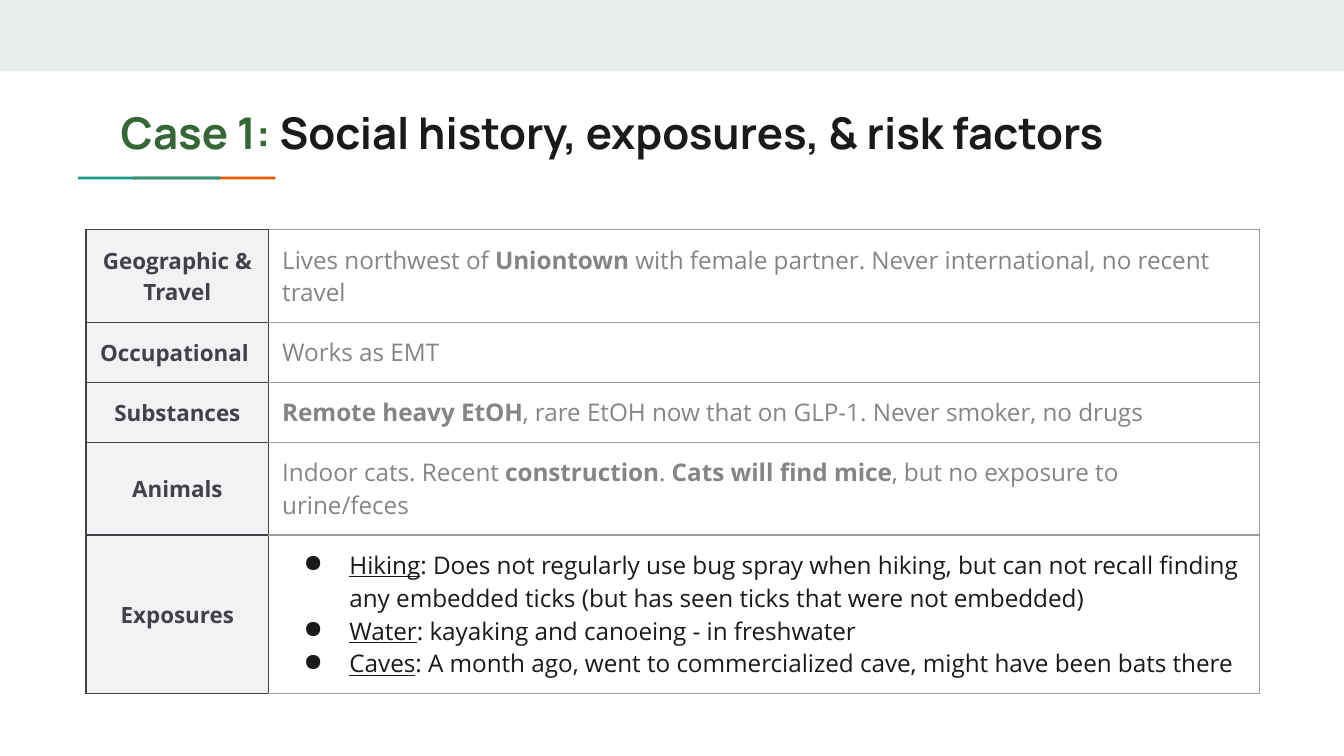
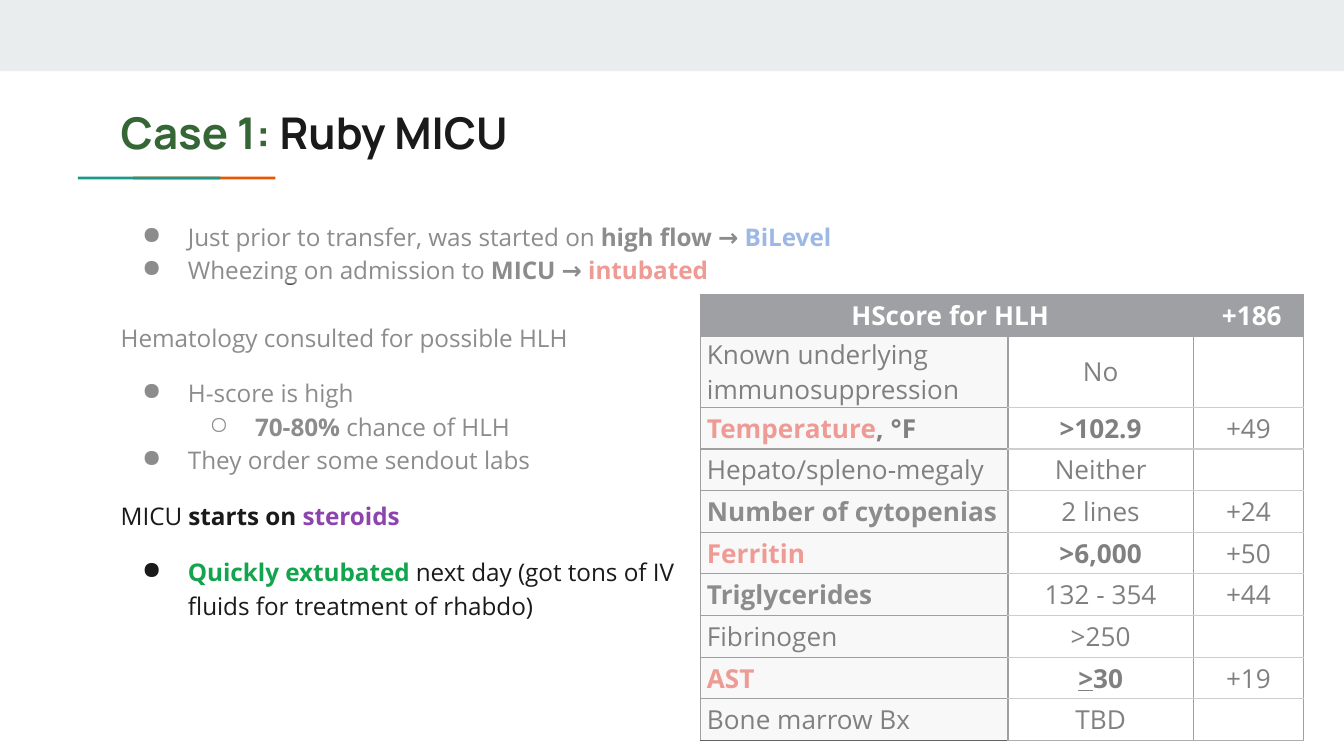
from typing import NamedTuple, Optional

from lxml.etree import SubElement as Sub
from pptx import Presentation
from pptx.dml.color import RGBColor as Rgb
from pptx.enum.shapes import MSO_SHAPE as Kind
from pptx.enum.text import MSO_ANCHOR as Anchor, MSO_AUTO_SIZE as Auto, PP_ALIGN as Align
from pptx.oxml.ns import qn
from pptx.util import Pt

PX = 4572
WHITE = Rgb(0xFF, 0xFF, 0xFF)
BLACK = Rgb(0x00, 0x00, 0x00)
INK = Rgb(0x1A, 0x1A, 0x1A)
SLATE = Rgb(0x40, 0x42, 0x47)
DIM = Rgb(0x85, 0x85, 0x85)
RULE = Rgb(0x9E, 0x9E, 0x9E)
PALE = Rgb(0xF1, 0xF2, 0xF3)
BAND = Rgb(0xE9, 0xED, 0xEE)
ORANGE = Rgb(0xEB, 0x56, 0x00)
TEAL = Rgb(0x1A, 0x99, 0x88)
FOREST = Rgb(0x35, 0x66, 0x35)
BLUE = Rgb(0x3B, 0x71, 0xCA)
RED = Rgb(0xDF, 0x38, 0x2C)
PURPLE = Rgb(0x8E, 0x44, 0xAD)
GREEN = Rgb(0x14, 0xA4, 0x4D)

HEAD = {"name": "Manrope", "size": Pt(23.4)}
BODY = {"name": "Open Sans", "size": Pt(13)}
LABEL = {"name": "Open Sans", "size": Pt(12)}
SCORE = {"name": "Open Sans", "size": Pt(14)}
FRAME = {"word_wrap": True, "vertical_anchor": Anchor.TOP}
EDGES = ("margin_left", "margin_top", "margin_right", "margin_bottom")
SIGNS = ("●", "○")


class Box(NamedTuple):
    left: int
    top: int
    width: int
    height: int


class Run(NamedTuple):
    text: str
    tone: Rgb = INK
    bold: bool = False
    under: bool = False


class Line(NamedTuple):
    runs: list[Run]
    level: Optional[int] = None
    before: int = 0


class Edge(NamedTuple):
    tone: Rgb
    width: float = 0.75


TITLE_BOX = Box(160, 138, 1682, 118)
STRIPES = [
    (Box(0, 0, 2000, 106), BAND),
    (Box(198, 263, 212, 4), ORANGE),
    (Box(116, 263, 212, 4), TEAL),
]
DARK, LIGHT, THICK = Edge(SLATE), Edge(RULE), Edge(SLATE, 1.5)

HISTORY_BOX = Box(128, 342, 1746, 634)
HISTORY_COLS = [272, 1474]
HISTORY_ROWS = [88, 58, 68, 76, 116]
HISTORY = [
    ("Geographic & Travel", [Line([
        Run("Lives northwest of ", DIM), Run("Uniontown ", DIM, True),
        Run("with female partner. Never international, no recent travel", DIM)])]),
    ("Occupational ", [Line([Run("Works as EMT", DIM)])]),
    ("Substances", [Line([
        Run("Remote heavy EtOH", DIM, True),
        Run(", rare EtOH now that on GLP-1. Never smoker, no drugs", DIM)])]),
    ("Animals", [Line([
        Run("Indoor cats. Recent ", DIM), Run("construction", DIM, True),
        Run(". ", DIM), Run("Cats will find mice", DIM, True),
        Run(", but no exposure to urine/feces", DIM)])]),
    ("Exposures", [
        Line([Run("Hiking", under=True),
              Run(": Does not regularly use bug spray when hiking, but can not recall "
                  "finding any embedded ticks (but has seen ticks that were not embedded)")], 0),
        Line([Run("Water", under=True), Run(": kayaking and canoeing - in freshwater")], 0),
        Line([Run("Caves", under=True),
              Run(": A month ago, went to commercialized cave, "
                  "might have been bats there")], 0)]),
]

COURSE_BOX = Box(160, 304, 1682, 148)
COURSE = [
    Line([Run("Just prior to transfer, was started on "), Run("high flow → ", INK, True),
          Run("BiLevel", BLUE, True)], 0),
    Line([Run("Wheezing on admission to "), Run("MICU → ", INK, True),
          Run("intubated", RED, True)], 0),
]
CONSULT_BOX = Box(160, 454, 864, 488)
CONSULT = [
    Line([Run("Hematology consulted for possible HLH")]),
    Line([Run("H-score is high")], 0, 12),
    Line([Run("70-80% ", INK, True), Run("chance of HLH")], 1),
    Line([Run("They order some sendout labs")], 0),
    Line([Run("MICU "), Run("starts on ", INK, True), Run("steroids", PURPLE, True)], None, 12),
    Line([Run("Quickly extubated", GREEN, True),
          Run(" next day (got tons of IV fluids for treatment of rhabdo)")], 0, 12),
]
HSCORE_BOX = Box(1042, 438, 898, 646)
HSCORE_COLS = [458, 276, 164]
HSCORE_ROW = 62
HSCORE = [
    ([Run("HScore for HLH", WHITE, True)], [], [Run("+186", WHITE, True)]),
    ([Run("Known underlying immunosuppression", BLACK)], [Run("No", BLACK)], []),
    ([Run("Temperature", RED, True), Run(", °F", BLACK, True)],
     [Run(">102.9", BLACK, True)], [Run("+49", BLACK)]),
    ([Run("Hepato/spleno-megaly", BLACK)], [Run("Neither", BLACK)], []),
    ([Run("Number of cytopenias", INK, True)], [Run("2 lines", BLACK)], [Run("+24", BLACK)]),
    ([Run("Ferritin", RED, True)], [Run(">6,000", BLACK, True)], [Run("+50", BLACK)]),
    ([Run("Triglycerides", INK, True)], [Run("132 - 354", BLACK)], [Run("+44", BLACK)]),
    ([Run("Fibrinogen", BLACK)], [Run(">250", BLACK)], []),
    ([Run("AST", RED, True)], [Run(">", BLACK, True, True), Run("30", BLACK, True)],
     [Run("+19", BLACK)]),
    ([Run("Bone marrow Bx", BLACK)], [Run("TBD", BLACK)], []),
]
VEILS = [Box(170, 304, 1078, 118), Box(170, 454, 700, 272), Box(1024, 426, 932, 676)]


def apply(item, values: dict) -> None:
    for name, value in values.items():
        setattr(item, name, value)


def scale(box: Box) -> list[int]:
    return [side * PX for side in box]


def write(frame, lines: list[Line], font: dict, form: dict) -> None:
    for i, line in enumerate(lines):
        para = frame.add_paragraph() if i else frame.paragraphs[0]
        if line.level is not None:
            prop = para._p.get_or_add_pPr()
            prop.set("marL", str((line.level + 1) * 100 * PX))
            prop.set("indent", str(-68 * PX))
            tint = Sub(prop, qn("a:buClr"))
            Sub(tint, qn("a:srgbClr"), val=str(INK))
            Sub(prop, qn("a:buChar"), char=SIGNS[line.level])
            para.level = line.level
        apply(para, form)
        if line.before:
            para.space_before = Pt(line.before)
        for item in line.runs:
            run = para.add_run()
            run.text = item.text
            apply(run.font, font | {"bold": item.bold, "underline": item.under})
            run.font.color.rgb = item.tone
        if not line.runs:
            Sub(para._p, qn("a:endParaRPr"), sz=str(int(font["size"].pt * 100)))


def add_rect(slide, box: Box, tone: Rgb, alpha: int = 100) -> None:
    rect = slide.shapes.add_shape(Kind.RECTANGLE, *scale(box))
    rect.shadow.inherit = False
    rect.fill.solid()
    rect.fill.fore_color.rgb = tone
    rect.line.fill.background()
    if alpha < 100:
        tint = rect._element.spPr.find(qn("a:solidFill"))[0]
        Sub(tint, qn("a:alpha"), val=str(alpha * 1000))


def add_text(slide, box: Box, lines: list[Line], font: dict, form: dict,
             auto: Auto = Auto.NONE) -> None:
    frame = slide.shapes.add_textbox(*scale(box)).text_frame
    apply(frame, FRAME | dict.fromkeys(EDGES, 20 * PX) | {"auto_size": auto})
    write(frame, lines, font, form)


def add_grid(slide, box: Box, cols: list[int], rows: list[int]):
    grid = slide.shapes.add_table(len(rows), len(cols), *scale(box)).table
    apply(grid, {"first_row": False, "horz_banding": False})
    for col, width in zip(grid.columns, cols):
        col.width = width * PX
    for row, height in zip(grid.rows, rows):
        row.height = height * PX
    return grid


def style(cell, edges: list[Edge], pads: list[int], fill: Optional[Rgb]) -> None:
    apply(cell, dict(zip(EDGES, [pad * PX for pad in pads])))
    cell.vertical_anchor = Anchor.MIDDLE
    prop = cell._tc.get_or_add_tcPr()
    for side, edge in zip("LRTB", edges):
        rule = Sub(prop, qn(f"a:ln{side}"), w=str(Pt(edge.width)))
        paint = Sub(rule, qn("a:solidFill"))
        Sub(paint, qn("a:srgbClr"), val=str(edge.tone))
    if fill is None:
        cell.fill.background()
    else:
        cell.fill.solid()
        cell.fill.fore_color.rgb = fill


def start(deck, topic: str):
    slide = deck.slides.add_slide(deck.slide_layouts[6])
    for box, tone in STRIPES:
        add_rect(slide, box, tone)
    title = Line([Run("Case 1:", FOREST, True), Run(f" {topic}", INK, True)])
    add_text(slide, TITLE_BOX, [title], HEAD, {})
    return slide


def add_past(deck) -> None:
    slide = start(deck, "Social history, exposures, & risk factors")
    grid = add_grid(slide, HISTORY_BOX, HISTORY_COLS, HISTORY_ROWS)
    for r, (label, lines) in enumerate(HISTORY):
        name, note = grid.cell(r, 0), grid.cell(r, 1)
        style(name, [DARK] * 4, [20] * 4, PALE)
        style(note, [DARK, LIGHT, LIGHT, LIGHT], [20] * 4, None)
        title = Line([Run(label, SLATE, True)])
        write(name.text_frame, [title], LABEL, {"alignment": Align.CENTER})
        form = {} if lines[0].level == 0 else {"space_after": Pt(12)}
        write(note.text_frame, lines, BODY, form)


def add_score(slide) -> None:
    grid = add_grid(slide, HSCORE_BOX, HSCORE_COLS, [HSCORE_ROW] * len(HSCORE))
    grid.cell(0, 0).merge(grid.cell(0, 1))
    for r, row in enumerate(HSCORE):
        for c, runs in enumerate(row):
            cell = grid.cell(r, c)
            top = THICK if r == 1 else DARK if r == 0 or c == 0 else LIGHT
            base = THICK if r == 0 else DARK if c == 0 else LIGHT
            fill = SLATE if r == 0 else PALE if c == 0 else None
            pad = 10 if r == 0 or c == 0 else 0
            style(cell, [DARK, DARK, top, base], [pad, 0, 0, 0], fill)
            side = Align.LEFT if r and c == 0 else Align.CENTER
            write(cell.text_frame, [Line(runs)], SCORE, {"alignment": side})


def add_stay(deck) -> None:
    slide = start(deck, "Ruby MICU")
    form = {"line_spacing": 1.15}
    add_text(slide, COURSE_BOX, COURSE, BODY, form)
    add_score(slide)
    add_text(slide, CONSULT_BOX, CONSULT, BODY, form, Auto.SHAPE_TO_FIT_TEXT)
    for box in VEILS:
        add_rect(slide, box, WHITE, 50)


def main() -> None:
    deck = Presentation()
    apply(deck, {"slide_width": 2000 * PX, "slide_height": 1125 * PX})
    add_past(deck)
    add_stay(deck)
    deck.save("out.pptx")


if __name__ == "__main__":
    main()
